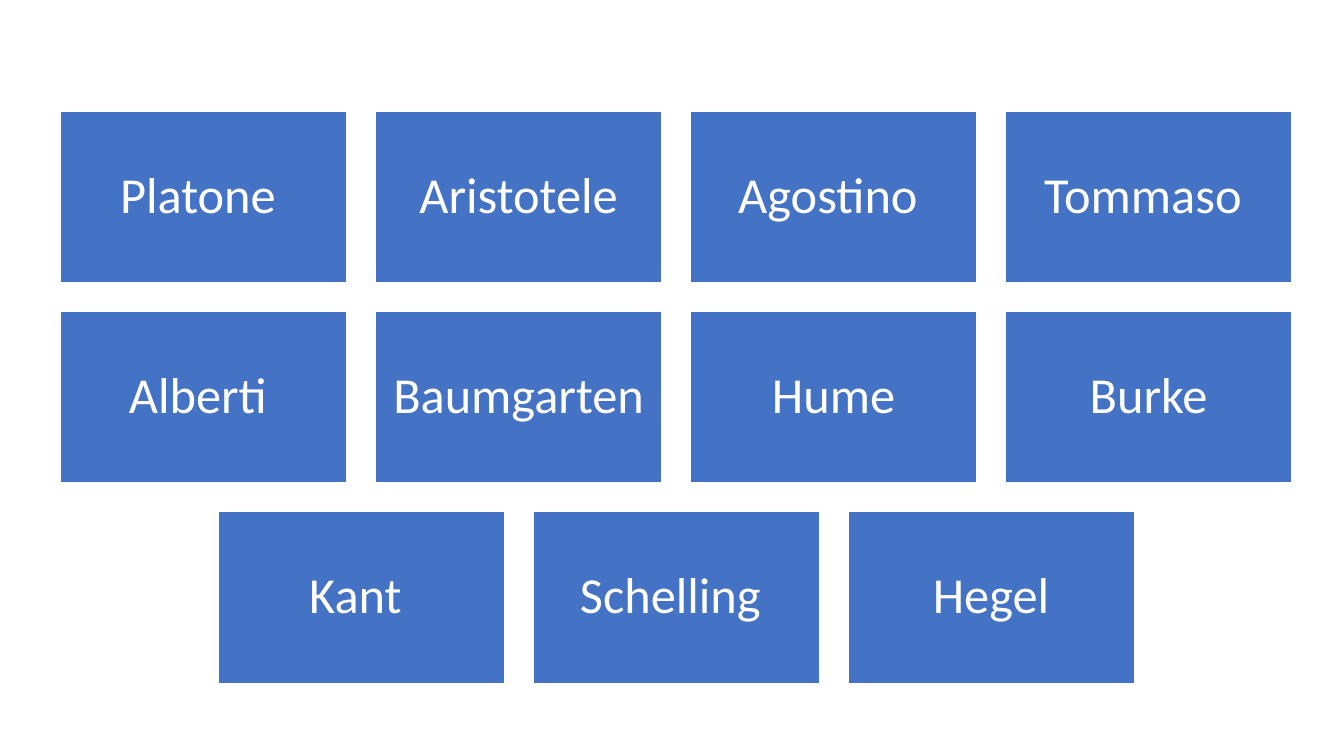
from pptx import Presentation
from pptx.dml.color import RGBColor
from pptx.enum.shapes import MSO_SHAPE as Shape
from pptx.enum.text import MSO_ANCHOR as Anchor, PP_ALIGN as Align
from pptx.util import Inches, Pt

BLUE = RGBColor(0x44, 0x72, 0xC4)
WHITE = RGBColor(0xFF, 0xFF, 0xFF)

PHILOSOPHERS = [
    ["Platone ", "Aristotele", "Agostino ", "Tommaso "],
    ["Alberti ", "Baumgarten ", "Hume", "Burke"],
    ["Kant ", "Schelling ", "Hegel"],
]
COLUMNS = 4
GRID_LEFT, GRID_TOP = 0.6, 1.1
CARD_WIDTH = 2.84
CARD_HEIGHT = CARD_WIDTH * 0.6
GAP = CARD_WIDTH * 0.1
INSET = Inches(0.15)


def write_text(frame, text, *, size, color, font="Calibri", align=Align.CENTER,
               anchor=Anchor.MIDDLE, line_spacing=0.9, inset=INSET):
    frame.word_wrap = True
    frame.vertical_anchor = anchor
    frame.margin_left = frame.margin_right = inset
    frame.margin_top = frame.margin_bottom = inset
    paragraph = frame.paragraphs[0]
    paragraph.alignment = align
    paragraph.line_spacing = line_spacing
    run = paragraph.add_run()
    run.text = text
    run.font.name = font
    run.font.size = Pt(size)
    run.font.color.rgb = color


def add_card(slide, column, row, name):
    left = GRID_LEFT + column * (CARD_WIDTH + GAP)
    top = GRID_TOP + row * (CARD_HEIGHT + GAP)
    card = slide.shapes.add_shape(Shape.RECTANGLE, Inches(left), Inches(top),
                                  Inches(CARD_WIDTH), Inches(CARD_HEIGHT))
    card.shadow.inherit = False
    card.fill.solid()
    card.fill.fore_color.rgb = BLUE
    card.line.color.rgb = WHITE
    card.line.width = Pt(1)
    write_text(card.text_frame, name, size=36, color=WHITE)


def main():
    presentation = Presentation()
    presentation.slide_width = Inches(13.33)
    presentation.slide_height = Inches(7.5)
    slide = presentation.slides.add_slide(presentation.slide_layouts[6])
    for row, names in enumerate(PHILOSOPHERS):
        first_column = (COLUMNS - len(names)) / 2
        for column, name in enumerate(names):
            add_card(slide, first_column + column, row, name)
    presentation.save("out.pptx")


if __name__ == "__main__":
    main()
